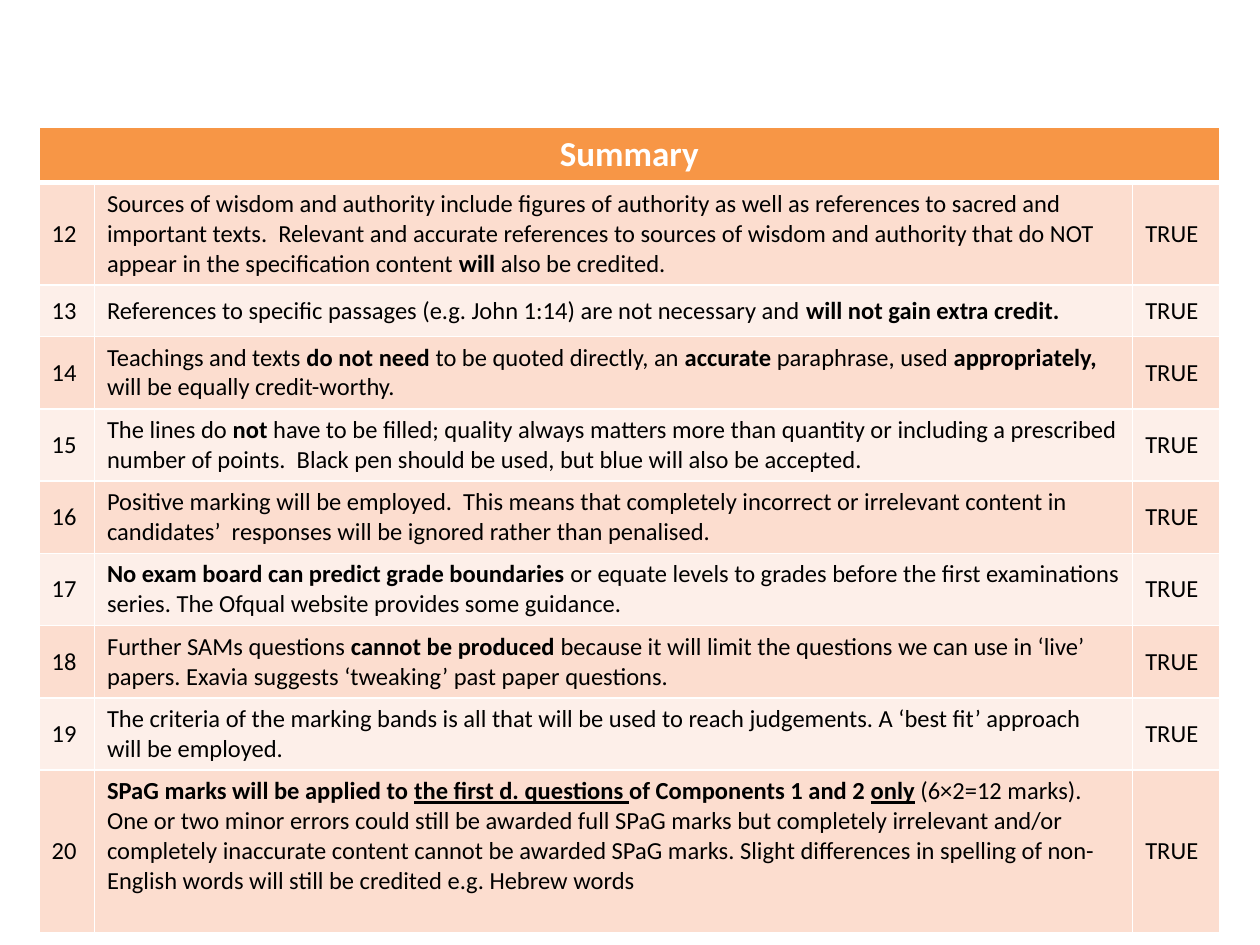
from lxml import etree
from pptx import Presentation
from pptx.dml.color import RGBColor
from pptx.enum.text import MSO_ANCHOR, PP_ALIGN
from pptx.oxml.ns import qn
from pptx.util import Inches, Pt

MIDDLE, TOP = MSO_ANCHOR.MIDDLE, MSO_ANCHOR.TOP
CENTER, LEFT = PP_ALIGN.CENTER, PP_ALIGN.LEFT

WHITE, BLACK = "FFFFFF", "000000"
ORANGE, BANDS = "F79646", ("FCDDCF", "FDEFE9")
PLAIN, BOLD, UNDERLINED = "", "b", "bu"
FIRST_NUMBER = 12
VERDICT = "TRUE"

# Each statement is a list of (text, style) runs
STATEMENTS = [
    [("Sources of wisdom and authority include figures of authority as well as references to "
      "sacred and important texts.  Relevant and accurate references to sources of wisdom and "
      "authority that do NOT appear in the specification content ", PLAIN),
     ("will", BOLD), (" also be credited.", PLAIN)],
    [("References to specific passages (e.g. John 1:14) are not necessary and ", PLAIN),
     ("will not gain extra credit.", BOLD)],
    [("Teachings and texts ", PLAIN), ("do not need ", BOLD),
     ("to be quoted directly, an ", PLAIN), ("accurate", BOLD),
     (" paraphrase, used ", PLAIN), ("appropriately,", BOLD),
     (" will be equally credit-worthy.", PLAIN)],
    [("The lines do ", PLAIN), ("not ", BOLD),
     ("have to be filled; quality always matters more than quantity or including a prescribed "
      "number of points.  Black pen should be used, but blue will also be accepted.", PLAIN)],
    [("Positive marking will be employed.  This means that completely incorrect or irrelevant "
      "content in candidates’  responses will be ignored rather than penalised.", PLAIN)],
    [("No exam board can predict grade boundaries", BOLD),
     (" or equate levels to grades before the first examinations series. The Ofqual website "
      "provides some guidance.", PLAIN)],
    [("Further SAMs questions ", PLAIN), ("cannot be produced ", BOLD),
     ("because it will limit the questions we can use in ‘live’ papers. Exavia suggests "
      "‘tweaking’ past paper questions.", PLAIN)],
    [("The criteria of the marking bands is all that will be used to reach judgements. "
      "A ‘best fit’ approach will be employed.", PLAIN)],
    [("SPaG marks will be applied to ", BOLD), ("the first d. questions ", UNDERLINED),
     ("of Components 1 and 2 ", BOLD), ("only", UNDERLINED),
     (" (6×2=12 marks). One or two minor errors could still be awarded full SPaG marks but "
      "completely irrelevant and/or completely inaccurate content cannot be awarded SPaG marks. "
      "Slight differences in spelling of non-English words will still be credited e.g. "
      "Hebrew words", PLAIN)],
]


def rgb(hex_colour):
    return RGBColor.from_string(hex_colour)


class SummarySlide:
    font = "Calibri"

    def __init__(self, presentation):
        self.slide = presentation.slides.add_slide(presentation.slide_layouts[6])

    def table(self, left, top, height, columns, row_height, row_count):
        frame = self.slide.shapes.add_table(
            row_count, len(columns), Inches(left), Inches(top),
            Inches(sum(columns)), Inches(height))
        grid = frame.table
        for column, width in zip(grid.columns, columns):
            column.width = Inches(width)
        for row in grid.rows:
            row.height = Inches(row_height)
        frame.height = Inches(height)
        return grid

    def cell(self, cell, runs, fill, size=14, colour=BLACK, align=LEFT,
             anchor=MIDDLE, top_line=1, bottom_line=1):
        self.borders(cell, top_line, bottom_line)
        cell.fill.solid()
        cell.fill.fore_color.rgb = rgb(fill)
        cell.vertical_anchor = anchor
        paragraph = cell.text_frame.paragraphs[0]
        paragraph.alignment = align
        for text, style in runs:
            run = paragraph.add_run()
            run.text = text
            font = run.font
            font.name, font.size = self.font, Pt(size)
            font.bold, font.underline = "b" in style, "u" in style
            font.color.rgb = rgb(colour)

    def borders(self, cell, top_line, bottom_line):
        properties = cell._tc.get_or_add_tcPr()
        widths = {"a:lnL": 1, "a:lnR": 1, "a:lnT": top_line, "a:lnB": bottom_line}
        for side, width in widths.items():
            line = etree.SubElement(properties, qn(side), w=str(Pt(width)))
            solid = etree.SubElement(line, qn("a:solidFill"))
            etree.SubElement(solid, qn("a:srgbClr"), val=WHITE)


def main():
    presentation = Presentation()
    presentation.slide_width, presentation.slide_height = Inches(10), Inches(7.5)
    page = SummarySlide(presentation)
    summary = page.table(0.31, 1.01, 6.31, (0.44, 8.24, 0.69), 0.41, len(STATEMENTS) + 1)

    # Heading across all columns
    heading = summary.cell(0, 0)
    heading.merge(summary.cell(0, 2))
    for column, runs in enumerate(([("Summary", BOLD)], [], [])):
        page.cell(summary.cell(0, column), runs, ORANGE, size=20, colour=WHITE,
                  align=CENTER, anchor=TOP, bottom_line=3)

    # Numbered statements in alternating bands
    for index, statement in enumerate(STATEMENTS):
        contents = ([(str(FIRST_NUMBER + index), PLAIN)], statement, [(VERDICT, PLAIN)])
        for column, runs in enumerate(contents):
            page.cell(summary.cell(index + 1, column), runs, BANDS[index % 2],
                      top_line=3 if index == 0 else 1)

    # Extra room below the last statement
    summary.cell(len(STATEMENTS), 1).margin_bottom = Inches(0.29)

    presentation.save("out.pptx")


if __name__ == "__main__":
    main()
